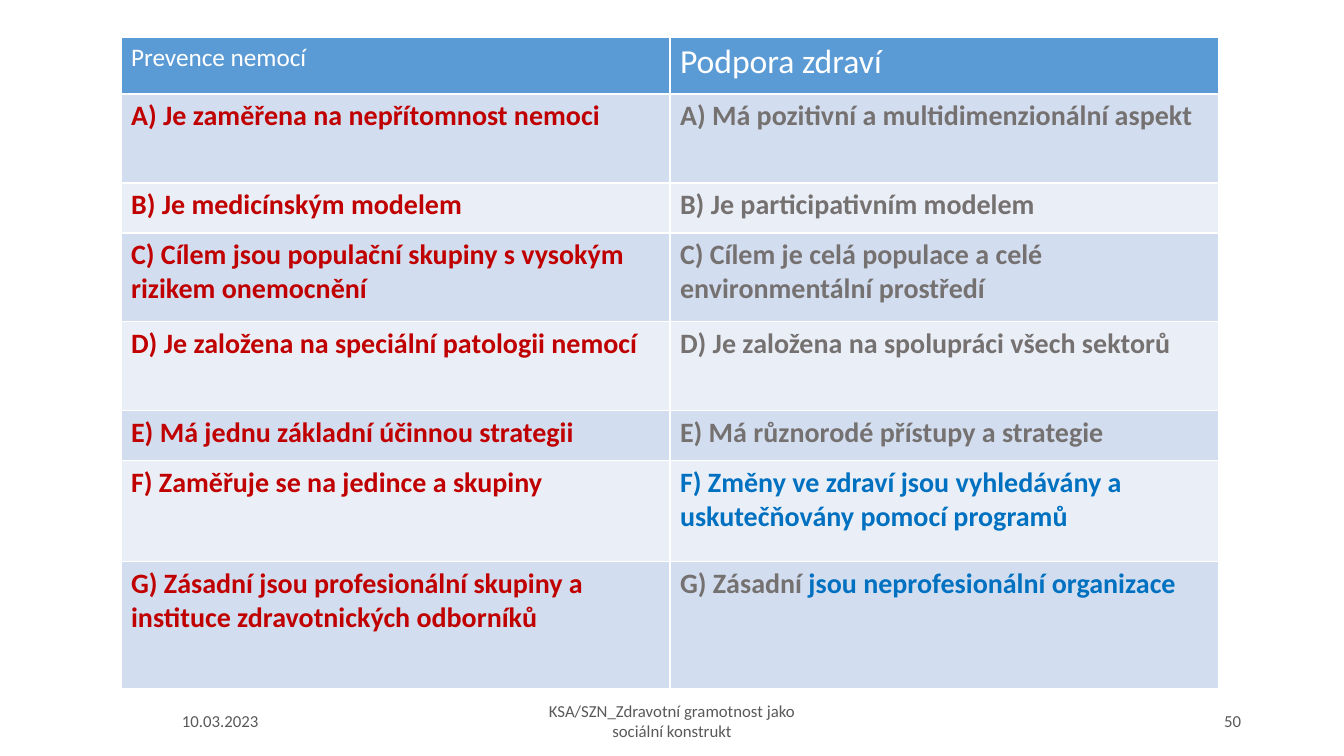
import pptx
import pptx.util
import pptx.dml.color
import pptx.enum.text
import pptx.oxml
import pptx.oxml.ns

# Content
RED, GREY, BLUE = "C00000", "767171", "0070C0"
HEADER_FILL, BAND_FILLS = "5B9BD5", ("D2DEEF", "EAEFF7")
WHITE, FOOTER_COLOR, FONT = "FFFFFF", "595959", "Calibri"

HEADERS = [("Prevence nemocí", 18), ("Podpora zdraví", 24)]
# Row height, prevention text, promotion runs as (text, colour)
ROWS = [
    (89, "A) Je zaměřena na nepřítomnost nemoci",
     [("A) Má pozitivní a multidimenzionální aspekt", GREY)]),
    (50, "B) Je medicínským modelem",
     [("B) Je participativním modelem", GREY)]),
    (89, "C) Cílem jsou populační skupiny s vysokým rizikem onemocnění",
     [("C) Cílem je celá populace a celé environmentální prostředí", GREY)]),
    (89, "D) Je založena na speciální patologii nemocí",
     [("D) Je založena na spolupráci všech sektorů", GREY)]),
    (50, "E) Má jednu základní účinnou strategii",
     [("E) Má různorodé přístupy a strategie", GREY)]),
    (101, "F) Zaměřuje se na jedince a skupiny",
     [("F) Změny ve zdraví jsou vyhledávány a uskutečňovány pomocí programů", BLUE)]),
    (127, "G) Zásadní jsou profesionální skupiny a instituce zdravotnických odborníků",
     [("G) Zásadní ", GREY), ("jsou neprofesionální organizace", BLUE)]),
]
TABLE_LEFT, TABLE_TOP, COLUMN_WIDTH, HEADER_HEIGHT = 121, 37, 549, 57

ALIGN = pptx.enum.text.PP_ALIGN
FOOTER_TOP, FOOTER_HEIGHT = 701, 40
# Left, width, alignment, text
FOOTERS = [
    (172, 281, ALIGN.LEFT, "10.03.2023"),
    (512, 320, ALIGN.CENTER, "KSA/SZN_Zdravotní gramotnost jako sociální konstrukt"),
    (890, 361, ALIGN.RIGHT, "50"),
]


def px(length):
    return pptx.util.Emu(round(length * 914400 / 100.8))


def color(value):
    return pptx.dml.color.RGBColor.from_string(value)


def style_font(font, size, bold=False):
    font.name = FONT
    font.size = pptx.util.Pt(size)
    font.bold = bold


def add_borders(cell):
    properties = cell._tc.get_or_add_tcPr()
    namespace = pptx.oxml.ns.nsdecls("a")
    for position, side in enumerate(("lnL", "lnR", "lnT", "lnB")):
        properties.insert(position, pptx.oxml.parse_xml(
            f'<a:{side} {namespace} w="12700"><a:solidFill>'
            f'<a:srgbClr val="{WHITE}"/></a:solidFill></a:{side}>'))


def fill_cell(cell, runs, size, bold, fill):
    paragraph = cell.text_frame.paragraphs[0]
    style_font(paragraph.font, size, bold)
    for text, run_color in runs:
        run = paragraph.add_run()
        run.text = text
        run.font.color.rgb = color(run_color)
    cell.fill.solid()
    cell.fill.fore_color.rgb = color(fill)
    add_borders(cell)


def add_comparison_table(slide):
    heights = [HEADER_HEIGHT] + [row[0] for row in ROWS]
    table = slide.shapes.add_table(
        len(heights), len(HEADERS), px(TABLE_LEFT), px(TABLE_TOP),
        px(COLUMN_WIDTH * len(HEADERS)), px(sum(heights))).table
    for column in table.columns:
        column.width = px(COLUMN_WIDTH)
    for row, height in zip(table.rows, heights):
        row.height = px(height)

    for column, (text, size) in enumerate(HEADERS):
        fill_cell(table.cell(0, column), [(text, WHITE)], size, False, HEADER_FILL)
    for index, (_, prevention, promotion) in enumerate(ROWS):
        for column, runs in enumerate(([(prevention, RED)], promotion)):
            fill_cell(table.cell(index + 1, column), runs, 20, True,
                      BAND_FILLS[index % 2])


def add_footer(slide, left, width, alignment, text):
    box = slide.shapes.add_textbox(px(left), px(FOOTER_TOP), px(width), px(FOOTER_HEIGHT))
    frame = box.text_frame
    frame.word_wrap = True
    frame.vertical_anchor = pptx.enum.text.MSO_ANCHOR.MIDDLE
    paragraph = frame.paragraphs[0]
    paragraph.text = text
    paragraph.alignment = alignment
    style_font(paragraph.font, 12)
    paragraph.font.color.rgb = color(FOOTER_COLOR)


def main():
    presentation = pptx.Presentation()
    presentation.slide_width = px(1344)
    presentation.slide_height = px(756)
    slide = presentation.slides.add_slide(presentation.slide_layouts[6])

    # Date, lecture name and page number
    for footer in FOOTERS:
        add_footer(slide, *footer)
    # Prevention against promotion
    add_comparison_table(slide)

    presentation.save("out.pptx")


if __name__ == "__main__":
    main()
